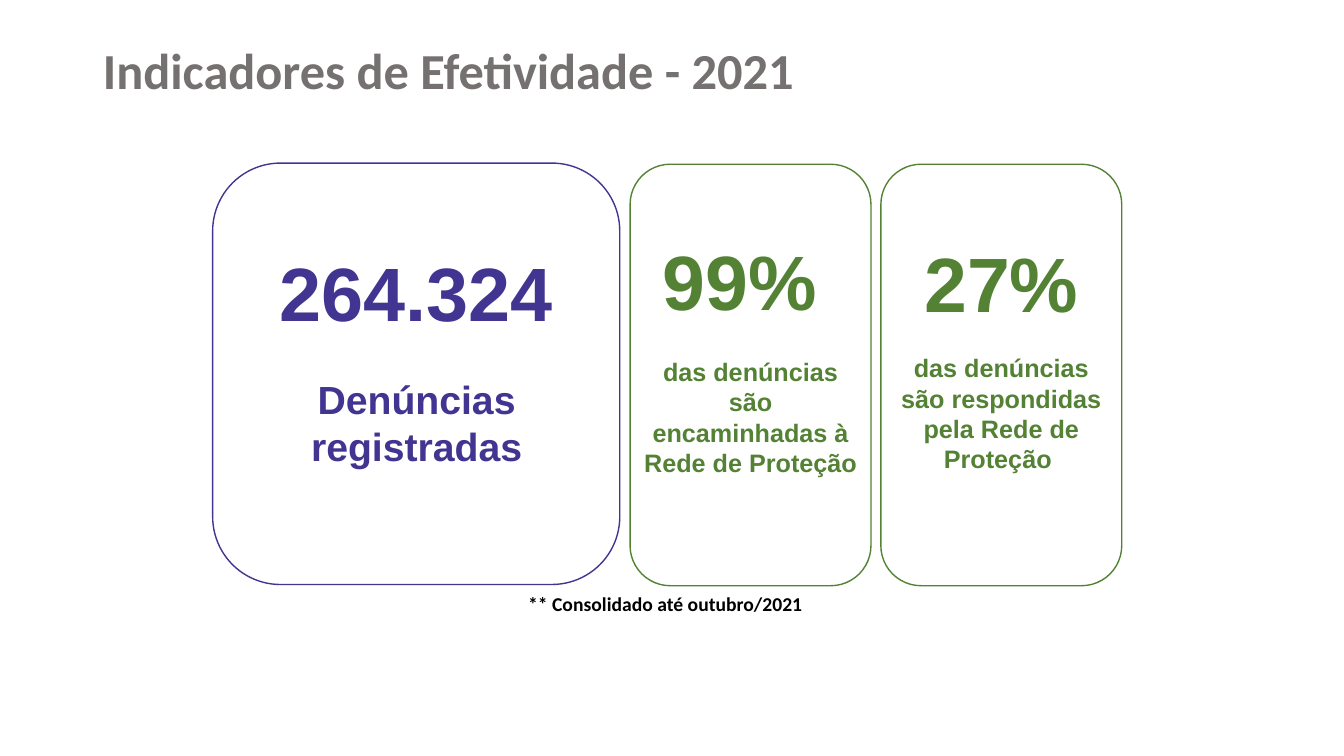
import pptx
import pptx.dml.color
import pptx.enum.shapes
import pptx.enum.text
import pptx.util

Cm = pptx.util.Cm
ANCHOR = pptx.enum.text.MSO_ANCHOR
ALIGN = pptx.enum.text.PP_ALIGN
COLORS = {
    "title": "767171",
    "purple": "423591",
    "green": "548235",
    "white": "FFFFFF",
    "black": "000000",
}


class IndicatorPage:
    def __init__(self, page):
        self.page = page

    def color(self, name):
        return pptx.dml.color.RGBColor.from_string(COLORS[name])

    def fill_text(self, frame, words, size, color, font="Arial", align=ALIGN.CENTER):
        frame.text = words
        para = frame.paragraphs[0]
        para.alignment = align
        for span in para.runs:
            span.font.name = font
            span.font.size = pptx.util.Pt(size)
            span.font.bold = True
            span.font.color.rgb = self.color(color)

    def title(self, words, left, top, width, height):
        box = self.page.shapes.title
        box.left, box.top, box.width, box.height = map(Cm, (left, top, width, height))
        frame = box.text_frame
        self.fill_text(frame, words, 36, "title", "Calibri", ALIGN.LEFT)
        frame.auto_size = pptx.enum.text.MSO_AUTO_SIZE.NONE
        frame.vertical_anchor = ANCHOR.TOP
        frame.paragraphs[0].line_spacing = 0.9

    def card(self, left, top, width, height, color):
        box = self.page.shapes.add_shape(
            pptx.enum.shapes.MSO_SHAPE.ROUNDED_RECTANGLE,
            Cm(left), Cm(top), Cm(width), Cm(height))
        box.shadow.inherit = False
        box.fill.solid()
        box.fill.fore_color.rgb = self.color("white")
        box.line.color.rgb = self.color(color)
        box.line.width = pptx.util.Pt(1)

    def text(self, words, left, top, width, height, size, color,
             anchor=ANCHOR.TOP, wrap=True, **style):
        box = self.page.shapes.add_textbox(Cm(left), Cm(top), Cm(width), Cm(height))
        frame = box.text_frame
        frame.word_wrap = wrap
        frame.auto_size = pptx.enum.text.MSO_AUTO_SIZE.SHAPE_TO_FIT_TEXT
        frame.vertical_anchor = anchor
        self.fill_text(frame, words, size, color, **style)


def main():
    deck = pptx.Presentation()
    deck.slide_width, deck.slide_height = Cm(33.87), Cm(19.05)
    page = IndicatorPage(deck.slides.add_slide(deck.slide_layouts[5]))

    page.title("Indicadores de Efetividade - 2021", 2.34, 1.02, 29.21, 3.68)

    sent, answered, card_width = 15.88, 22.2, 6.07
    for left in (sent, answered):
        page.card(left, 4.14, card_width, 10.62, "green")
    page.card(5.36, 4.11, 10.26, 10.62, "purple")

    page.text("264.324", 6.76, 6.07, 7.47, 2.57, 54, "purple", wrap=False)
    page.text("Denúncias registradas", 5.38, 9.32, 10.24, 2.64, 28, "purple",
              anchor=ANCHOR.MIDDLE)

    page.text("99%", 16.41, 5.77, 4.45, 2.62, 55, "green", wrap=False)
    page.text("das denúncias são encaminhadas à Rede de Proteção",
              sent, 8.84, card_width, 3.33, 18, "green", anchor=ANCHOR.MIDDLE)

    page.text("27%", answered, 5.82, card_width, 2.62, 55, "green")
    page.text("das denúncias são respondidas pela Rede de Proteção ",
              answered, 8.76, card_width, 3.33, 18, "green")

    page.text("** Consolidado até outubro/2021", 13.06, 14.78, 11.13, 0.86,
              14, "black", font="Calibri", align=ALIGN.LEFT)

    deck.save("out.pptx")


if __name__ == "__main__":
    main()
